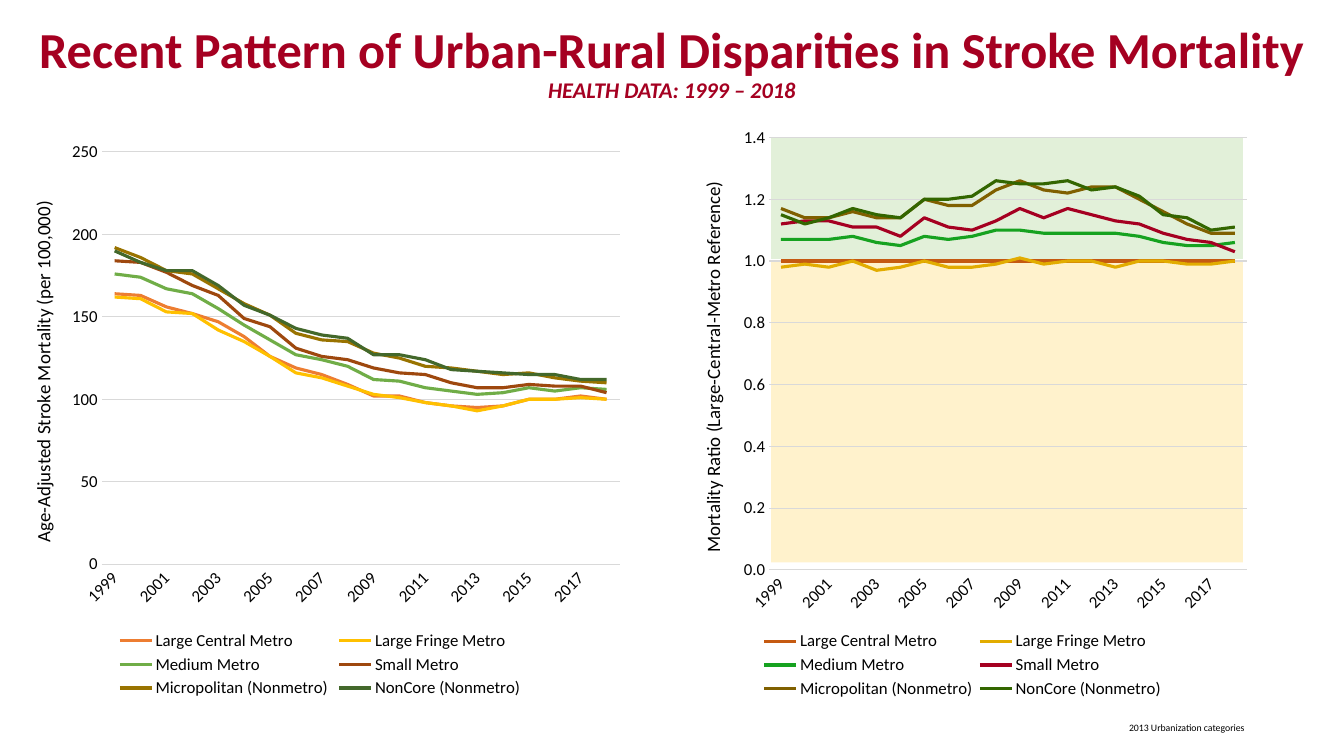
"""Build the slide on urban-rural disparities in stroke mortality."""
from lxml import etree
from pptx import Presentation
from pptx import util as u
from pptx.chart import data as cd
from pptx.dml.color import RGBColor
from pptx.enum import chart as ch, shapes, text
from pptx.oxml import parse_xml
from pptx.oxml.ns import nsdecls, qn

COLORS = {"text": "000000", "title": "A50021", "grid": "D9D9D9",
          "above": "E2F0D9", "below": "FFF2CC"}
TITLE = ("Recent Pattern of Urban-Rural Disparities in Stroke Mortality",
         "HEALTH DATA: 1999 – 2018")
FOOTNOTE = " 2013 Urbanization categories"
FONT = "Calibri"
YEARS = [str(y) for y in range(1999, 2019)]
AREAS = ["Large Central Metro", "Large Fringe Metro", "Medium Metro",
         "Small Metro", "Micropolitan (Nonmetro)", "NonCore (Nonmetro)"]
BANDS = [("below", (550.8, 185.8, 337, 216)), ("above", (550.8, 98.6, 337, 86.4))]

RATIO = {
    "box": (471.6, 90, 432, 411.8),
    "axis": "Mortality Ratio (Large-Central-Metro Reference)",
    "top": 1.4, "step": 0.2, "fmt": "#,##0.0",
    "plot": (0.18, 0.02, 0.79, 0.75),
    "legend": (0.16, 0.87, 0.68, 0.13),
    "label": (0.06, 0.09),
    "colors": ["C55A11", "E2AC00", "16A220", "A50021", "806000", "336600"],
    "values": [
        [1] * 20,
        [0.98, 0.99, 0.98, 1, 0.97, 0.98, 1, 0.98, 0.98, 0.99,
         1.01, 0.99, 1, 1, 0.98, 1, 1, 0.99, 0.99, 1],
        [1.07, 1.07, 1.07, 1.08, 1.06, 1.05, 1.08, 1.07, 1.08, 1.1,
         1.1, 1.09, 1.09, 1.09, 1.09, 1.08, 1.06, 1.05, 1.05, 1.06],
        [1.12, 1.13, 1.13, 1.11, 1.11, 1.08, 1.14, 1.11, 1.1, 1.13,
         1.17, 1.14, 1.17, 1.15, 1.13, 1.12, 1.09, 1.07, 1.06, 1.03],
        [1.17, 1.14, 1.14, 1.16, 1.14, 1.14, 1.2, 1.18, 1.18, 1.23,
         1.26, 1.23, 1.22, 1.24, 1.24, 1.2, 1.16, 1.12, 1.09, 1.09],
        [1.15, 1.12, 1.14, 1.17, 1.15, 1.14, 1.2, 1.2, 1.21, 1.26,
         1.25, 1.25, 1.26, 1.23, 1.24, 1.21, 1.15, 1.14, 1.1, 1.11]],
}
RATE = {
    "box": (5.8, 92.2, 445.7, 409),
    "axis": "Age-Adjusted Stroke Mortality (per 100,000)",
    "top": 250, "step": 50, "fmt": "General",
    "plot": (0.15, 0.04, 0.83, 0.72),
    "legend": (0.17, 0.87, 0.66, 0.13),
    "label": (0.03, 0.12),
    "colors": ["ED7D31", "FFC000", "70AD47", "9E480E", "997300", "43682B"],
    "values": [
        [164, 163, 156, 152, 147, 138, 126, 119, 115, 109,
         102, 102, 98, 96, 95, 96, 100, 100, 102, 100],
        [162, 161, 153, 152, 142, 135, 126, 116, 113, 108,
         103, 101, 98, 96, 93, 96, 100, 100, 101, 100],
        [176, 174, 167, 164, 155, 145, 136, 127, 124, 120,
         112, 111, 107, 105, 103, 104, 107, 105, 107, 106],
        [184, 183, 177, 169, 163, 149, 144, 131, 126, 124,
         119, 116, 115, 110, 107, 107, 109, 108, 108, 104],
        [192, 186, 178, 176, 167, 158, 151, 140, 136, 135,
         128, 125, 120, 119, 117, 115, 116, 113, 111, 110],
        [190, 183, 178, 178, 169, 157, 151, 143, 139, 137,
         127, 127, 124, 118, 117, 116, 115, 115, 112, 112]],
}


def rgb(value):
    """Turn a palette name or hex string into a colour."""
    return RGBColor.from_string(COLORS.get(value, value))


def points(box):
    """Turn a box of numbers into lengths."""
    return [u.Pt(v) for v in box]


def style(font, size, color="text", **flags):
    """Set face, size, colour and flags of a font."""
    font.name, font.size, font.color.rgb = FONT, u.Pt(size), rgb(color)
    for name, value in flags.items():
        setattr(font, name, value)


def stroke(line, color, width=0.75):
    """Set colour and width of a line."""
    line.color.rgb, line.width = rgb(color), u.Pt(width)


def layout(values, inner=False):
    """Make a manual chart layout from fractions."""
    node = parse_xml(f"<c:layout {nsdecls('c')}><c:manualLayout/></c:layout>")
    pairs = [("layoutTarget", "inner")] if inner else []
    pairs += [("xMode", "edge"), ("yMode", "edge")] + list(zip("xywh", values))
    for tag, value in pairs:
        etree.SubElement(node[0], qn(f"c:{tag}")).set("val", str(value))
    return node


def place(parent, before, node):
    """Replace the layout of a chart part, keeping schema order."""
    for old in parent.findall(qn("c:layout")):
        parent.remove(old)
    if before is None:
        parent.insert(0, node)
    else:
        parent.find(qn(before)).addnext(node)


def no_fill():
    """Make transparent chart-part properties."""
    return parse_xml(f"<c:spPr {nsdecls('c', 'a')}><a:noFill/>"
                     "<a:ln><a:noFill/></a:ln></c:spPr>")


def add_lines(s, spec):
    """Add one line chart."""
    data = cd.CategoryChartData(number_format=spec["fmt"])
    data.categories = YEARS
    for name, values in zip(AREAS, spec["values"]):
        data.add_series(name, values)
    chart = s.shapes.add_chart(ch.XL_CHART_TYPE.LINE, *points(spec["box"]), data).chart
    style(chart.font, 10)
    chart.has_title = False
    chart.plots[0].vary_by_categories = False
    for series, color in zip(chart.plots[0].series, spec["colors"]):
        series.smooth = False
        series.marker.style = ch.XL_MARKER_STYLE.NONE
        stroke(series.format.line, color, 2.25)

    cat, val = chart.category_axis, chart.value_axis
    for axis in (cat, val):
        axis.major_tick_mark = axis.minor_tick_mark = ch.XL_TICK_MARK.NONE
        style(axis.tick_labels.font, 12)
    stroke(cat.format.line, "grid")
    cat._element.find(qn("c:txPr")).find(qn("a:bodyPr")).set("rot", "-2700000")
    val.minimum_scale, val.maximum_scale, val.major_unit = 0, spec["top"], spec["step"]
    val.tick_labels.number_format = spec["fmt"]
    val.tick_labels.number_format_is_linked = False
    val.format.line.fill.background()
    stroke(val.major_gridlines.format.line, "grid")
    tf = val.axis_title.text_frame
    tf.text = spec["axis"]
    style(tf.paragraphs[0].runs[0].font, 13.5, bold=False)
    tf._txBody.find(qn("a:bodyPr")).set("rot", "-5400000")
    place(val.axis_title._element, "c:tx", layout(spec["label"]))

    chart.has_legend = True
    legend = chart.legend
    legend.position = ch.XL_LEGEND_POSITION.BOTTOM
    legend.include_in_layout = False
    style(legend.font, 12)
    place(legend._element, "c:legendPos", layout(spec["legend"]))
    root = chart._chartSpace
    area = root.chart.plotArea
    place(area, None, layout(spec["plot"], inner=True))
    area.append(no_fill())
    root.chart.addnext(no_fill())


def main():
    """Build and save the slide."""
    prs = Presentation()
    prs.slide_width, prs.slide_height = u.Pt(960), u.Pt(540)
    s = prs.slides.add_slide(prs.slide_layouts[5])

    for color, box in BANDS:
        sp = s.shapes.add_shape(shapes.MSO_SHAPE.RECTANGLE, *points(box))
        sp.shadow.inherit = False
        sp.fill.solid()
        sp.fill.fore_color.rgb = rgb(color)
        sp.line.fill.background()
    add_lines(s, RATIO)

    title = s.shapes.title
    title.left, title.top, title.width, title.height = points((0, -6.5, 960, 104.4))
    tf = title.text_frame
    tf.text = "\v".join(TITLE)
    tf.vertical_anchor = text.MSO_ANCHOR.MIDDLE
    p = tf.paragraphs[0]
    p.alignment, p.line_spacing = text.PP_ALIGN.CENTER, 0.9
    style(p.runs[0].font, 36, "title", bold=True)
    style(p.runs[1].font, 16, "title", bold=True, italic=True)

    add_lines(s, RATE)
    tf = s.shapes.add_textbox(*points((797.8, 512, 181.4, 15.8))).text_frame
    tf.word_wrap = True
    tf.text = FOOTNOTE
    style(tf.paragraphs[0].runs[0].font, 7)
    prs.save("out.pptx")


if __name__ == "__main__":
    main()
